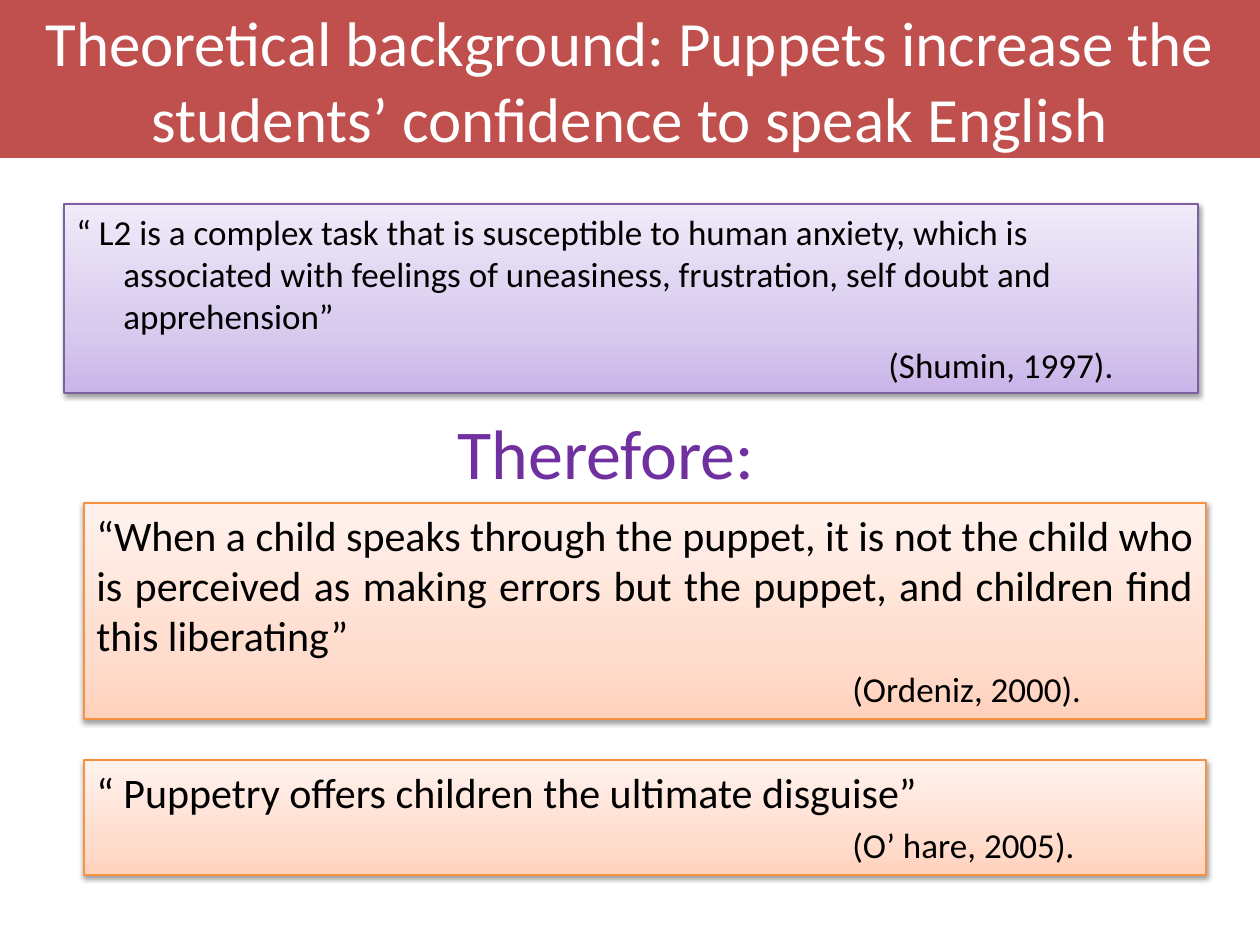
from copy import deepcopy
from dataclasses import dataclass

from lxml import etree
from pptx import Presentation
from pptx import util as u
from pptx.dml.color import RGBColor
from pptx.enum import shapes, text
from pptx.oxml.ns import qn

SCALE = u.Inches(1) / 126


@dataclass(frozen=True)
class Theme:
    font: str = "Calibri"
    banner: str = "C0504D"
    light: str = "FFFFFF"
    dark: str = "000000"
    accent: str = "7030A0"
    violet: tuple = ("C9B5E8", "D8CBEE", "F0EAF9")
    violet_line: str = "7D60A0"
    orange: tuple = ("FFD2BD", "FFDED0", "FFF2ED")
    orange_line: str = "F69240"
    stops: tuple = (0, 0.35, 1)
    title: int = 36
    heading: int = 40
    quote: int = 24
    small: int = 20


THEME = Theme()


def px(length):
    return u.Emu(round(length * SCALE))


def add_text(frame, words, size, color=THEME.dark, align=text.PP_ALIGN.LEFT,
             before=0, margin=0, hanging=0, first=False):
    para = frame.paragraphs[0] if first else frame.add_paragraph()
    para.alignment = align
    para.space_before = u.Pt(before)
    indents = para._p.get_or_add_pPr()
    indents.set("marL", str(px(margin)))
    indents.set("indent", str(-px(hanging)))
    span = para.add_run()
    span.text = words
    span.font.name = THEME.font
    span.font.size = u.Pt(size)
    span.font.color.rgb = RGBColor.from_string(color)


def add_box(page, box):
    shape = page.shapes.add_shape(shapes.MSO_SHAPE.RECTANGLE, *map(px, box))
    shape.shadow.inherit = False
    shape.text_frame.word_wrap = True
    return shape


def add_gradient(shape, colors):
    shape.fill.gradient()
    shape.fill.gradient_angle = 90
    stop_list = shape.element.spPr.find(".//" + qn("a:gsLst"))
    stop_list.insert(1, deepcopy(stop_list[0]))
    for stop, color, position in zip(shape.fill.gradient_stops, colors, THEME.stops):
        stop.color.rgb = RGBColor.from_string(color)
        stop.position = position


def add_shadow(shape):
    effects = shape.element.spPr.find(qn("a:effectLst"))
    shadow = etree.SubElement(effects, qn("a:outerShdw"), blurRad="40000",
                              dist="20000", dir="5400000", rotWithShape="0")
    color = etree.SubElement(shadow, qn("a:srgbClr"), val=THEME.dark)
    etree.SubElement(color, qn("a:alpha"), val="38000")


def add_banner(page, box, words):
    banner = add_box(page, box)
    banner.fill.solid()
    banner.fill.fore_color.rgb = RGBColor.from_string(THEME.banner)
    banner.line.fill.background()
    banner.text_frame.vertical_anchor = text.MSO_ANCHOR.MIDDLE
    add_text(banner.text_frame, words, THEME.title, THEME.light,
             text.PP_ALIGN.CENTER, first=True)


def add_quote(page, box, quote, source, colors, line, source_margin,
              size=THEME.quote, align=text.PP_ALIGN.JUSTIFY, before=0, hanging=0):
    card = add_box(page, box)
    add_gradient(card, colors)
    card.line.color.rgb = RGBColor.from_string(line)
    card.line.width = u.Pt(0.75)
    add_shadow(card)
    frame = card.text_frame
    frame.vertical_anchor = text.MSO_ANCHOR.TOP
    add_text(frame, quote, size, align=align, before=before,
             margin=hanging, hanging=hanging, first=True)
    add_text(frame, source, THEME.small, before=4, margin=source_margin)


def add_heading(page, box, words):
    heading = page.shapes.add_textbox(*map(px, box))
    heading.text_frame.word_wrap = True
    add_text(heading.text_frame, words, THEME.heading, THEME.accent,
             text.PP_ALIGN.CENTER, first=True)


def main():
    deck = Presentation()
    deck.slide_width, deck.slide_height = px(1260), px(945)
    page = deck.slides.add_slide(deck.slide_layouts[6])

    add_banner(page, (0, 0, 1260, 158),
               "Theoretical background: Puppets increase the students’ "
               "confidence to speak English")
    add_quote(page, (64, 204, 1134, 189),
              "“ L2 is a complex task that is susceptible to human anxiety, "
              "which is associated with feelings of uneasiness, frustration, "
              "self doubt and apprehension”",
              "(Shumin, 1997).", THEME.violet, THEME.violet_line, 812,
              size=THEME.small, align=text.PP_ALIGN.LEFT, before=4, hanging=47)
    orange_quotes = (
        (503, 216, "“When a child speaks through the puppet, it is not the child "
                   "who is perceived as making errors but the puppet, and children "
                   "find this liberating”", "(Ordeniz, 2000)."),
        (760, 115, "“ Puppetry offers children the ultimate disguise”",
         "(O’ hare, 2005)."),
    )
    for top, height, quote, source in orange_quotes:
        add_quote(page, (84, top, 1122, height), quote, source,
                  THEME.orange, THEME.orange_line, 756)
    add_heading(page, (432, 403, 348, 97), "Therefore:")

    deck.save("out.pptx")


if __name__ == "__main__":
    main()
